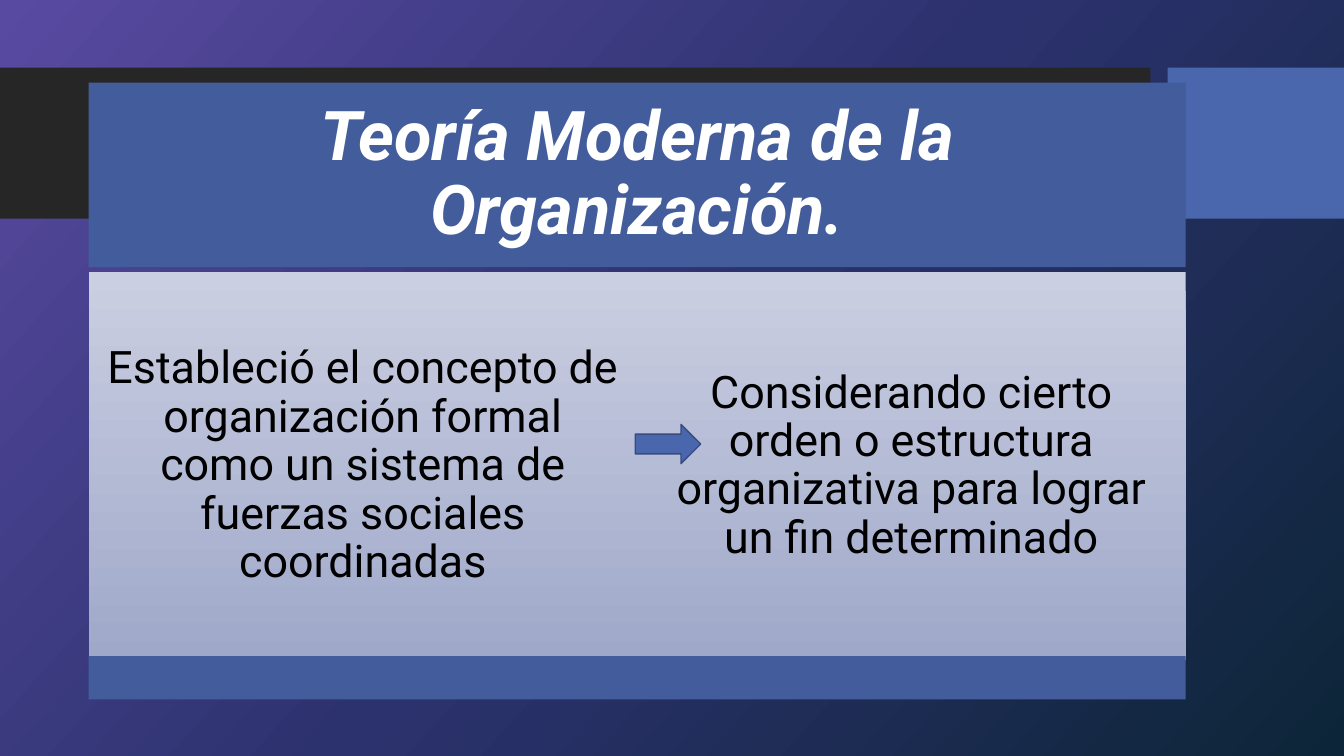
import copy
from dataclasses import dataclass

import pptx
import pptx.dml.color
import pptx.enum.shapes
import pptx.enum.text
import pptx.oxml.ns
import pptx.util

Inches = pptx.util.Inches
Preset = pptx.enum.shapes.MSO_SHAPE


@dataclass(frozen=True)
class Theme:
    font: str = "Roboto"
    title_size: int = 49
    body_size: int = 32
    white: str = "FFFFFF"
    black: str = "000000"
    charcoal: str = "262626"
    accent: str = "4A66AC"
    header: str = "435D9C"
    outline: str = "374B7F"
    panel: tuple = ((0, "CACFE1"), (1, "A0A8CA"))
    backdrop: tuple = ((0, "594AA1"), (0.5, "2C326E"), (1, "0D2538"))


@dataclass(frozen=True)
class Block:
    left: float
    top: float
    width: float
    height: float
    color: str = ""
    preset: Preset = Preset.RECTANGLE
    outline: str = ""


THEME = Theme()
LEFT, WIDTH = 0.88, 10.88
PANEL_WIDTH = WIDTH / 2
PANEL_TOP, PANEL_HEIGHT = 2.7, 3.85

TITLE = "Teoría Moderna de la Organización."
PANEL_TEXTS = (
    "Estableció el concepto de organización formal como un sistema de fuerzas sociales coordinadas",
    "Considerando cierto orden o estructura organizativa para lograr un fin determinado",
)
MASTER_BARS = (
    Block(0, 0.67, 11.41, 1.5, THEME.charcoal),
    Block(11.58, 0.67, 1.75, 1.5, THEME.accent),
)
HEADER = Block(LEFT, 0.82, WIDTH, 1.83)
FOREGROUND = (
    Block(LEFT, 6.51, WIDTH, 0.43, THEME.header),
    Block(6.3, 4.21, 0.65, 0.39, THEME.accent, Preset.RIGHT_ARROW, THEME.outline),
)


def rgb(color: str) -> pptx.dml.color.RGBColor:
    return pptx.dml.color.RGBColor.from_string(color)


def paint_solid(fill, color: str) -> None:
    fill.solid()
    fill.fore_color.rgb = rgb(color)


def paint_gradient(fill, owner, stops: tuple, angle: float) -> None:
    fill.gradient()
    fill.gradient_angle = angle
    stop_list = owner.find(".//" + pptx.oxml.ns.qn("a:gsLst"))
    while len(stop_list) < len(stops):
        stop_list.append(copy.deepcopy(stop_list[0]))
    for stop, (position, color) in zip(fill.gradient_stops, stops):
        stop.position = position
        stop.color.rgb = rgb(color)


def draw_block(slide, block: Block) -> None:
    shape = slide.shapes.add_shape(
        block.preset, Inches(block.left), Inches(block.top), Inches(block.width), Inches(block.height)
    )
    shape.shadow.inherit = False
    paint_solid(shape.fill, block.color)
    if block.outline:
        shape.line.color.rgb = rgb(block.outline)
        shape.line.width = pptx.util.Pt(1)
    else:
        shape.line.fill.background()


def place(placeholder, block: Block) -> None:
    placeholder.left, placeholder.top = Inches(block.left), Inches(block.top)
    placeholder.width, placeholder.height = Inches(block.width), Inches(block.height)
    placeholder.element.getparent().append(placeholder.element)


def write_text(box, text: str, *, size: int, color: str, margin: float,
               bold: bool = False, italic: bool = False) -> None:
    frame = box.text_frame
    frame.word_wrap = True
    frame.auto_size = pptx.enum.text.MSO_AUTO_SIZE.NONE
    frame.vertical_anchor = pptx.enum.text.MSO_ANCHOR.MIDDLE
    frame.margin_left = frame.margin_right = Inches(margin)
    frame.margin_top = frame.margin_bottom = Inches(margin)
    para = frame.paragraphs[0]
    para.alignment = pptx.enum.text.PP_ALIGN.CENTER
    para.line_spacing = 0.9
    para.space_before = pptx.util.Pt(0)
    properties = para._p.get_or_add_pPr()
    properties.set("marL", "0")
    properties.set("indent", "0")
    properties.append(pptx.oxml.parse_xml(f"<a:buNone {pptx.oxml.ns.nsdecls('a')}/>"))
    span = para.add_run()
    span.text = text
    span.font.name = THEME.font
    span.font.size = pptx.util.Pt(size)
    span.font.color.rgb = rgb(color)
    span.font.bold = bold
    span.font.italic = italic


def main() -> None:
    deck = pptx.Presentation()
    deck.slide_width, deck.slide_height = Inches(13.33), Inches(7.5)
    page = deck.slides.add_slide(deck.slide_layouts[3])
    paint_gradient(page.background.fill, page.element, THEME.backdrop, 318)

    for bar in MASTER_BARS:
        draw_block(page, bar)

    title, *panels = list(page.placeholders)
    place(title, HEADER)
    paint_solid(title.fill, THEME.header)
    write_text(title, TITLE, size=THEME.title_size, color=THEME.white, margin=0.2, bold=True, italic=True)

    for index, (panel, text) in enumerate(zip(panels, PANEL_TEXTS)):
        place(panel, Block(LEFT + index * PANEL_WIDTH, PANEL_TOP, PANEL_WIDTH, PANEL_HEIGHT))
        paint_gradient(panel.fill, panel.element, THEME.panel, 270)
        write_text(panel, text, size=THEME.body_size, color=THEME.black, margin=0.13)

    for block in FOREGROUND:
        draw_block(page, block)

    deck.save("out.pptx")


if __name__ == "__main__":
    main()
